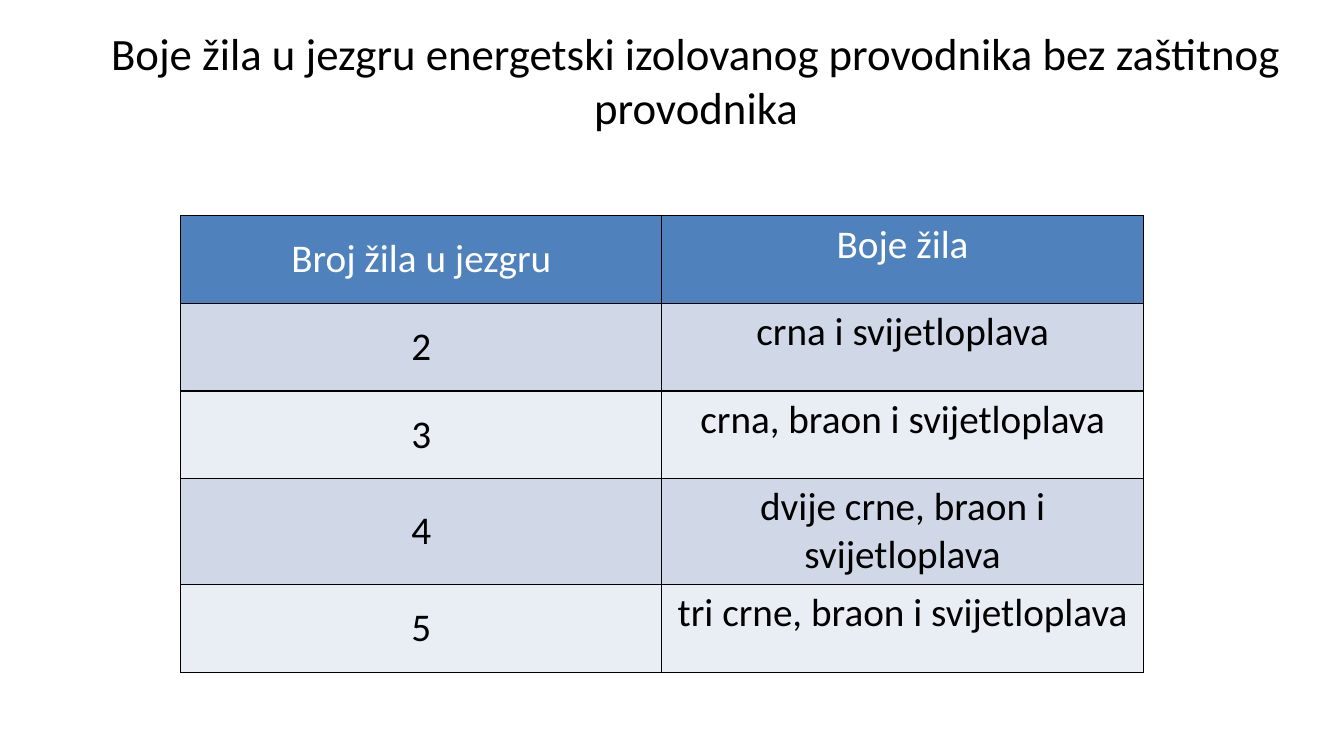
from lxml.etree import SubElement
from pptx import Presentation
from pptx.dml.color import RGBColor
from pptx.enum.text import MSO_ANCHOR, MSO_AUTO_SIZE, PP_ALIGN
from pptx.oxml.ns import qn
from pptx.util import Pt

FONT = "Calibri"
BLACK = RGBColor(0x00, 0x00, 0x00)
WHITE = RGBColor(0xFF, 0xFF, 0xFF)
HEADER_BLUE = RGBColor(0x4F, 0x81, 0xBD)
BAND_COLORS = (RGBColor(0xD0, 0xD8, 0xE8), RGBColor(0xE9, 0xED, 0xF4))

TITLE = "Boje žila u jezgru energetski izolovanog provodnika bez zaštitnog provodnika"
CORE_COLORS = (
    ("Broj žila u jezgru", "Boje žila"),
    ("2", "crna i svijetloplava"),
    ("3", "crna, braon i svijetloplava"),
    ("4", "dvije crne, braon i svijetloplava"),
    ("5", "tri crne, braon i svijetloplava"),
)
COLUMN_WIDTH = Pt(343.8)
ROW_HEIGHT = Pt(62.6)


def format_paragraph(paragraph, size, color):
    paragraph.alignment = PP_ALIGN.CENTER
    paragraph.font.name = FONT
    paragraph.font.size = Pt(size)
    paragraph.font.bold = False
    paragraph.font.color.rgb = color


def add_title(slide):
    title = slide.shapes.title
    title.left, title.top = Pt(34.6), Pt(15.1)
    title.width, title.height = Pt(925.2), Pt(85)
    frame = title.text_frame
    frame.text = TITLE
    frame.word_wrap = True
    frame.auto_size = MSO_AUTO_SIZE.NONE
    frame.vertical_anchor = MSO_ANCHOR.TOP
    format_paragraph(frame.paragraphs[0], 32, BLACK)


def add_borders(cell):
    properties = cell._tc.get_or_add_tcPr()
    for position, side in enumerate(("a:lnL", "a:lnR", "a:lnT", "a:lnB")):
        line = SubElement(properties, qn(side), w=str(Pt(1)))
        fill = SubElement(line, qn("a:solidFill"))
        SubElement(fill, qn("a:srgbClr"), val=str(BLACK))
        properties.insert(position, line)


def fill_cell(cell, text, background, color, anchor):
    cell.text = text
    cell.vertical_anchor = anchor
    cell.fill.solid()
    cell.fill.fore_color.rgb = background
    format_paragraph(cell.text_frame.paragraphs[0], 28, color)
    add_borders(cell)


def add_core_table(slide):
    row_count, column_count = len(CORE_COLORS), len(CORE_COLORS[0])
    table = slide.shapes.add_table(
        row_count, column_count, Pt(129), Pt(154.1),
        COLUMN_WIDTH * column_count, ROW_HEIGHT * row_count,
    ).table
    for row_index, texts in enumerate(CORE_COLORS):
        is_header = row_index == 0
        background = HEADER_BLUE if is_header else BAND_COLORS[(row_index - 1) % 2]
        color = WHITE if is_header else BLACK
        for column_index, text in enumerate(texts):
            anchor = MSO_ANCHOR.MIDDLE if column_index == 0 else MSO_ANCHOR.TOP
            fill_cell(table.cell(row_index, column_index), text, background, color, anchor)


def main():
    presentation = Presentation()
    presentation.slide_width, presentation.slide_height = Pt(960), Pt(540)
    slide = presentation.slides.add_slide(presentation.slide_layouts[5])
    add_title(slide)
    add_core_table(slide)
    presentation.save("out.pptx")


if __name__ == "__main__":
    main()
